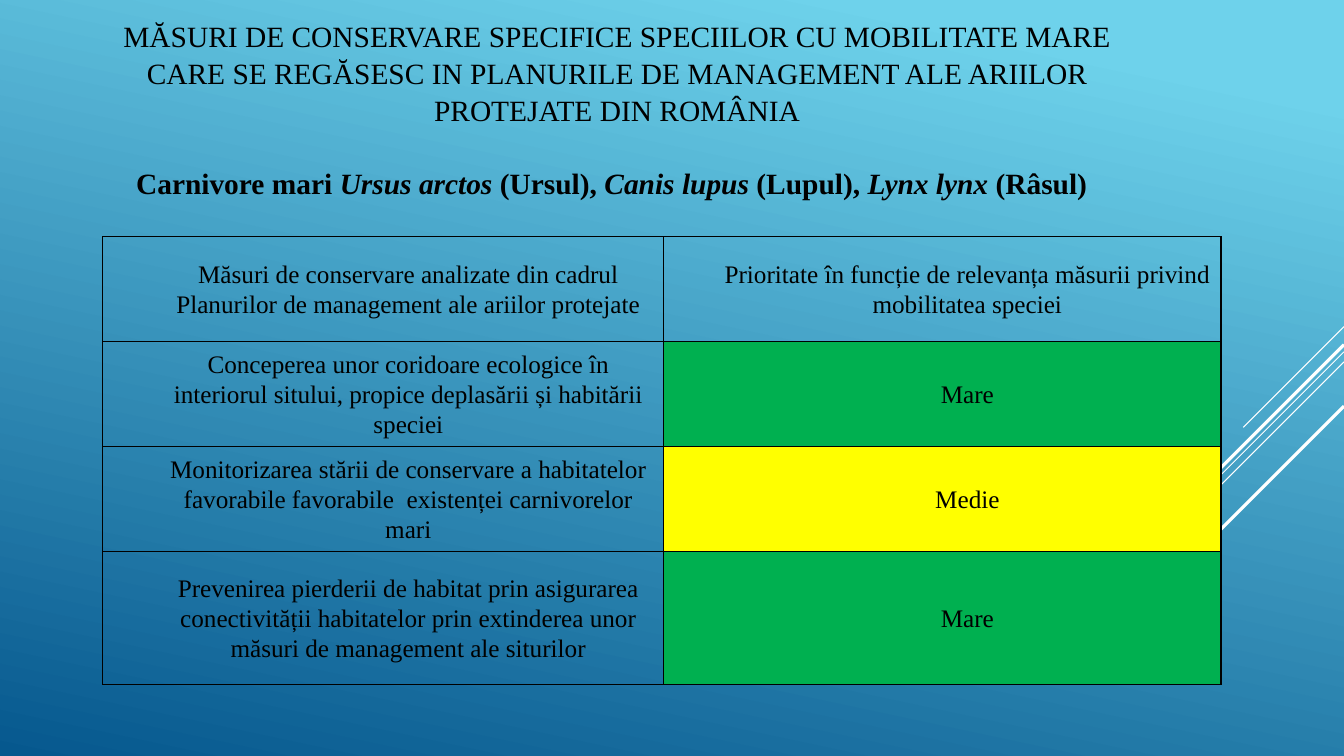
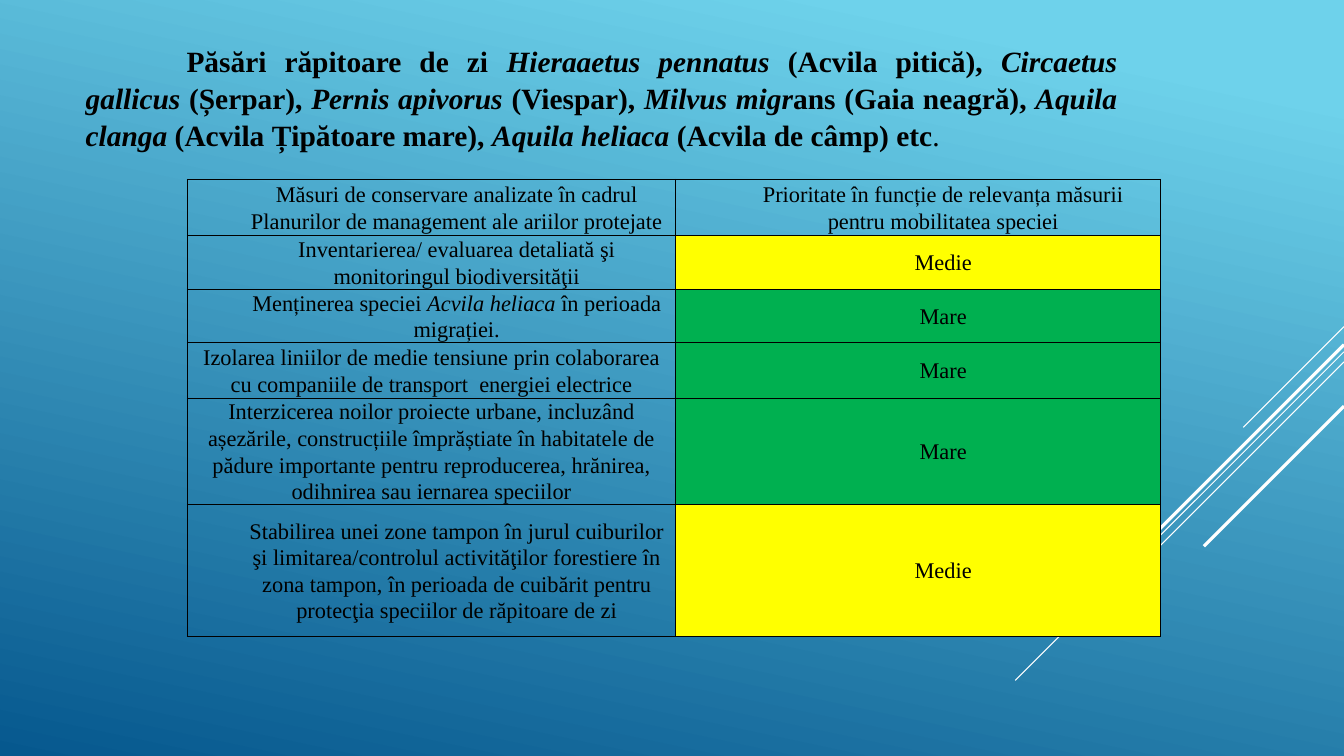
from dataclasses import dataclass

from lxml import etree
from pptx import Presentation
from pptx.dml.color import RGBColor
from pptx.enum.shapes import MSO_CONNECTOR
from pptx.enum.text import MSO_ANCHOR, MSO_AUTO_SIZE, PP_ALIGN
from pptx.oxml.ns import qn
from pptx.util import Inches, Pt

STRAIGHT = MSO_CONNECTOR.STRAIGHT
MIDDLE, BOTTOM, TOP = MSO_ANCHOR.MIDDLE, MSO_ANCHOR.BOTTOM, MSO_ANCHOR.TOP
CENTER, JUSTIFY = PP_ALIGN.CENTER, PP_ALIGN.JUSTIFY
PLAIN_TABLE_STYLE = "{2D5ABB26-0587-4C30-8999-92F81FD0307C}"


@dataclass(frozen=True)
class Theme:
    font: str = "Times New Roman"
    ink: str = "000000"
    ray: str = "FFFFFF"
    sky: str = "6ED2EB"
    deep: str = "06588E"
    green: str = "00B050"
    yellow: str = "FFFF00"
    heading_size: float = 21
    heading_spacing: float = 1.05
    cell_spacing: float = 1.07
    cell_indent: float = 0.5
    thin: float = 0.75
    thick: float = 2.25
    border: float = 1


THEME = Theme()
PRIORITY_FILLS = {"Mare": THEME.green, "Medie": THEME.yellow}
SLIDE_WIDTH, SLIDE_HEIGHT = 13.33, 7.5

# Each ray falls at 45 degrees from the right edge: start height, run, weight
RAYS = [
    (3.24, 1.0, THEME.thin),
    (3.49, 3.26, THEME.thin),
    (3.59, 2.07, THEME.thin),
    (3.42, 1.91, THEME.thick),
    (4.03, 1.39, THEME.thick),
]

# Asterisks switch italics on and off
CARNIVORES = {
    "title": "MĂSURI DE CONSERVARE SPECIFICE SPECIILOR CU MOBILITATE MARE CARE SE "
             "REGĂSESC IN PLANURILE DE MANAGEMENT ALE ARIILOR PROTEJATE DIN ROMÂNIA",
    "species": "Carnivore mari *Ursus arctos *(Ursul), *Canis lupus *(Lupul), "
               "*Lynx lynx *(Râsul)",
    "species_box": (0.75, 1.57, 12.16, 5.39),
    "first_line": 0.5,
    "table_origin": (1.02, 2.35),
    "columns": (5.56, 5.53),
    "row_heights": (1.04, 1.04, 1.04, 1.32),
    "size": 18,
    "inset": 0.07,
    "rows": [
        ("Măsuri de conservare analizate din cadrul Planurilor de management ale "
         "ariilor protejate",
         "Prioritate în funcție de relevanța măsurii privind mobilitatea speciei"),
        ("Conceperea unor coridoare ecologice în interiorul sitului, propice "
         "deplasării și habitării speciei", "Mare"),
        ("Monitorizarea stării de conservare a habitatelor favorabile favorabile  "
         "existenței carnivorelor mari", "Medie"),
        ("Prevenirea pierderii de habitat prin asigurarea conectivității habitatelor "
         "prin extinderea unor măsuri de management ale siturilor", "Mare"),
    ],
}

RAPTORS = {
    "species": "Păsări răpitoare de zi *Hieraaetus pennatus *(Acvila pitică), "
               "*Circaetus gallicus *(Șerpar), *Pernis apivorus *(Viespar), "
               "*Milvus migr*ans (Gaia neagră), *Aquila clanga *(Acvila Țipătoare "
               "mare), *Aquila heliaca *(Acvila de câmp) etc",
    "ending": ".",
    "species_box": (0.75, 0.36, 10.43, 6.64),
    "first_line": 1.0,
    "table_origin": (1.86, 1.78),
    "columns": (4.84, 4.81),
    "row_heights": (0.56, 0.53, 0.53, 0.55, 1.05, 1.31),
    "size": 16,
    "inset": 0.06,
    "flush_rows": (3, 4),
    "rows": [
        ("Măsuri de conservare analizate în cadrul Planurilor de management ale "
         "ariilor protejate",
         "Prioritate în funcție de relevanța măsurii pentru mobilitatea speciei"),
        ("Inventarierea/ evaluarea detaliată şi monitoringul biodiversităţii", "Medie"),
        ("Menținerea speciei *Acvila heliaca *în perioada migrației.", "Mare"),
        ("Izolarea liniilor de medie tensiune prin colaborarea cu companiile de "
         "transport  energiei electrice", "Mare"),
        ("Interzicerea noilor proiecte urbane, incluzând așezările, construcțiile "
         "împrăștiate în habitatele de pădure importante pentru reproducerea, "
         "hrănirea, odihnirea sau iernarea speciilor", "Mare"),
        ("Stabilirea unei zone tampon în jurul cuiburilor şi limitarea/controlul "
         "activităţilor forestiere în zona tampon, în perioada de cuibărit pentru "
         "protecţia speciilor de răpitoare de zi", "Medie"),
    ],
}


def color(value):
    return RGBColor.from_string(value)


def write_runs(paragraph, text, size, bold=False):
    for index, part in enumerate(text.split("*")):
        run = paragraph.add_run()
        run.text = part
        font = run.font
        font.name, font.size = THEME.font, Pt(size)
        font.bold, font.italic = bold, index % 2 == 1
        font.color.rgb = color(THEME.ink)


def set_indent(paragraph, left, first_line=0):
    properties = paragraph._p.get_or_add_pPr()
    properties.set("marL", str(Inches(left)))
    properties.set("indent", str(Inches(first_line)))
    return properties


def place_placeholder(shape, box, anchor, alignment):
    """Moves a placeholder into its box and returns its first paragraph."""
    shape.left, shape.top, shape.width, shape.height = map(Inches, box)
    frame = shape.text_frame
    frame.auto_size = MSO_AUTO_SIZE.NONE
    frame.word_wrap = True
    frame.vertical_anchor = anchor
    paragraph = frame.paragraphs[0]
    paragraph.alignment = alignment
    paragraph.line_spacing = THEME.heading_spacing
    paragraph.space_before = Pt(0)
    return paragraph


def add_title(slide, text):
    paragraph = place_placeholder(slide.shapes.title, (0.75, 0.17, 10.74, 1.14),
                                  BOTTOM, CENTER)
    write_runs(paragraph, text, THEME.heading_size)


def add_species(slide, content):
    paragraph = place_placeholder(slide.placeholders[1], content["species_box"],
                                  TOP, JUSTIFY)
    paragraph.space_after = Pt(6)
    properties = set_indent(paragraph, 0, content["first_line"])
    etree.SubElement(properties, qn("a:buNone"))
    write_runs(paragraph, content["species"], THEME.heading_size, bold=True)
    if "ending" in content:
        write_runs(paragraph, content["ending"], THEME.heading_size)


def add_borders(cell):
    properties = cell._tc.get_or_add_tcPr()
    for index, side in enumerate(("lnL", "lnR", "lnT", "lnB")):
        line = etree.Element(qn(f"a:{side}"), w=str(Pt(THEME.border)))
        fill = etree.SubElement(line, qn("a:solidFill"))
        etree.SubElement(fill, qn("a:srgbClr"), val=THEME.ink)
        properties.insert(index, line)


def fill_cell(cell, text, content, indent):
    cell.vertical_anchor = MIDDLE
    cell.margin_left = cell.margin_right = Inches(content["inset"])
    cell.margin_top = cell.margin_bottom = 0
    if text in PRIORITY_FILLS:
        cell.fill.solid()
        cell.fill.fore_color.rgb = color(PRIORITY_FILLS[text])
    else:
        cell.fill.background()
    add_borders(cell)
    paragraph = cell.text_frame.paragraphs[0]
    paragraph.alignment = CENTER
    paragraph.line_spacing = THEME.cell_spacing
    set_indent(paragraph, indent)
    write_runs(paragraph, text, content["size"])


def add_measures_table(slide, content):
    columns, heights = content["columns"], content["row_heights"]
    box = (*content["table_origin"], sum(columns), sum(heights))
    frame = slide.shapes.add_table(len(heights), len(columns), *map(Inches, box))
    table = frame.table
    table.first_row = table.horz_banding = False
    for style in frame.element.iter(qn("a:tableStyleId")):
        style.text = PLAIN_TABLE_STYLE
    for column, width in zip(table.columns, columns):
        column.width = Inches(width)
    for row_index, (height, texts) in enumerate(zip(heights, content["rows"])):
        table.rows[row_index].height = Inches(height)
        for column_index, text in enumerate(texts):
            flush = column_index == 0 and row_index in content.get("flush_rows", ())
            fill_cell(table.cell(row_index, column_index), text, content,
                      0 if flush else THEME.cell_indent)


def paint_background(master):
    fill = master.background.fill
    fill.gradient()
    fill.gradient_angle = 360 - 102
    stops = ((0.1, THEME.sky), (1.0, THEME.deep))
    for stop, (position, value) in zip(fill.gradient_stops, stops):
        stop.position = position
        stop.color.rgb = color(value)


def add_rays(slide, master):
    """Draws the rays on a slide, then hands them to the master."""
    for index, (top, run, weight) in enumerate(RAYS):
        ends = (SLIDE_WIDTH, top, SLIDE_WIDTH - run, top + run)
        ray = slide.shapes.add_connector(STRAIGHT, *map(Inches, ends))
        ray.line.color.rgb = color(THEME.ray)
        ray.line.width = Pt(weight)
        etree.SubElement(ray.element.spPr, qn("a:effectLst"))
        ray.element.nvCxnSpPr.cNvPr.set("id", str(100 + index))
        master.shapes.element.append(ray.element)


def add_measures_slide(presentation, content):
    slide = presentation.slides.add_slide(presentation.slide_layouts[1])
    if "title" in content:
        add_title(slide, content["title"])
    else:
        title = slide.shapes.title.element
        title.getparent().remove(title)
    add_species(slide, content)
    add_measures_table(slide, content)
    return slide


def main():
    presentation = Presentation()
    presentation.slide_width = Inches(SLIDE_WIDTH)
    presentation.slide_height = Inches(SLIDE_HEIGHT)
    master = presentation.slide_master
    paint_background(master)
    slides = [add_measures_slide(presentation, content)
              for content in (CARNIVORES, RAPTORS)]
    add_rays(slides[0], master)
    presentation.save("out.pptx")


if __name__ == "__main__":
    main()
